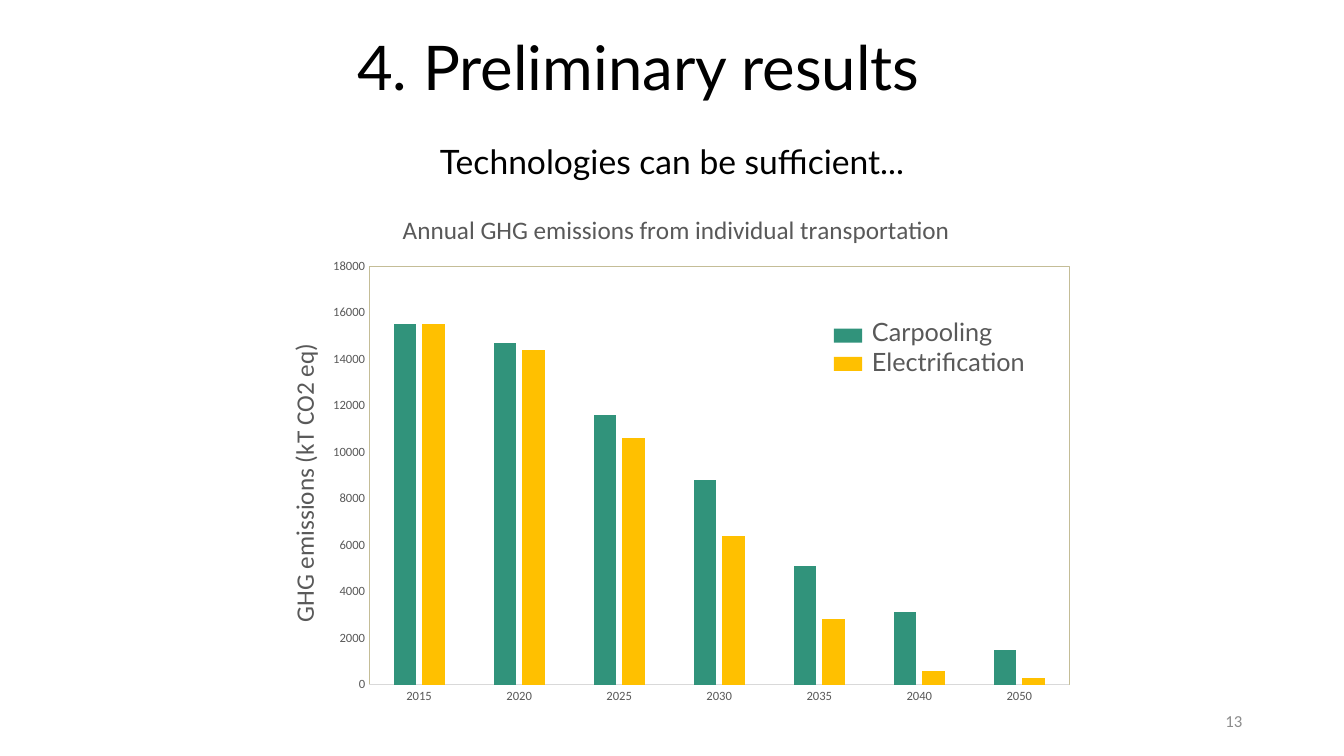
import pptx
import pptx.chart.data
import pptx.dml.color
import pptx.enum.chart
import pptx.enum.shapes
import pptx.enum.text
import pptx.oxml
import pptx.oxml.ns
import pptx.util

PX = 9144  # 100 px to the inch
COLORS = {"black": "000000", "text": "595959", "number": "8C8C8C", "axis": "D9D9D9",
          "frame": "C4BD97", "carpooling": "31937B", "electrification": "FFC000"}
ALIGN = pptx.enum.text.PP_ALIGN
ANCHOR = pptx.enum.text.MSO_ANCHOR
YEARS = ["2015", "2020", "2025", "2030", "2035", "2040", "2050"]
EMISSIONS = {
    "carpooling": [15500, 14700, 11600, 8800, 5100, 3100, 1500],
    "electrification": [15500, 14400, 10600, 6400, 2800, 600, 300],
}


class SlideBuilder:
    heading_font = "Lato"
    body_font = "Calibri"

    def __init__(self, slide):
        self.slide = slide

    def color(self, name):
        return pptx.dml.color.RGBColor.from_string(COLORS[name])

    def box(self, *lengths):
        return [length * PX for length in lengths]

    def style(self, font, size, color, name):
        font.size = pptx.util.Pt(size)
        font.bold = False
        font.name = name
        font.color.rgb = self.color(color)

    def text(self, box, lines, size, color, align=ALIGN.LEFT, anchor=ANCHOR.TOP,
             font=heading_font, spacing=1.0, parent=None):
        frame = (parent or self.slide).shapes.add_textbox(*self.box(*box)).text_frame
        frame.word_wrap = True
        frame.vertical_anchor = anchor
        for i, line in enumerate(lines):
            paragraph = frame.add_paragraph() if i else frame.paragraphs[0]
            paragraph.alignment = align
            paragraph.line_spacing = spacing
            run = paragraph.add_run()
            run.text = line
            self.style(run.font, size, color, font)

    def swatch(self, box, color, parent):
        rect = parent.shapes.add_shape(
            pptx.enum.shapes.MSO_SHAPE.RECTANGLE, *self.box(*box))
        rect.shadow.inherit = False
        rect.fill.solid()
        rect.fill.fore_color.rgb = self.color(color)
        rect.line.fill.background()

    def legend(self, left, top, names):
        group = self.slide.shapes.add_group_shape()
        for i, name in enumerate(names):
            self.swatch((left, top + 28 * i, 28, 14), name, group)
        self.text((left + 28, top - 17, 269, 131), [name.capitalize() for name in names],
                  18, "text", parent=group)

    def place(self, element, inner=False, **fractions):
        """Fix the position of a chart part, in fractions of the chart."""
        target = '<c:layoutTarget val="inner"/>' if inner else ""
        modes = "".join(f'<c:{key}Mode val="edge"/>' for key in "xy")
        values = "".join(f'<c:{key} val="{value}"/>' for key, value in fractions.items())
        layout = pptx.oxml.parse_xml(
            f'<c:layout {pptx.oxml.ns.nsdecls("c")}><c:manualLayout>'
            f'{target}{modes}{values}</c:manualLayout></c:layout>')
        for old in element.findall(pptx.oxml.ns.qn("c:layout")):
            element.remove(old)
        text = element.find(pptx.oxml.ns.qn("c:tx"))
        if text is None:
            element.insert(0, layout)
        else:
            text.addnext(layout)

    def chart_title(self, title, text, x, y):
        run = title.text_frame.paragraphs[0].add_run()
        run.text = text
        self.style(run.font, 18, "text", self.body_font)
        self.place(title._element, x=x, y=y)

    def frame_plot(self, plot_area):
        plot_area.append(pptx.oxml.parse_xml(
            f'<c:spPr {pptx.oxml.ns.nsdecls("c", "a")}><a:noFill/><a:ln w="9525"><a:solidFill>'
            f'<a:srgbClr val="{COLORS["frame"]}"/></a:solidFill></a:ln></c:spPr>'))

    def column_chart(self, box, title, axis_title, categories, series):
        data = pptx.chart.data.CategoryChartData()
        data.categories = categories
        for name, values in series.items():
            data.add_series(name.capitalize(), values)
        chart = self.slide.shapes.add_chart(
            pptx.enum.chart.XL_CHART_TYPE.COLUMN_CLUSTERED, *self.box(*box), data).chart
        self.style(chart.font, 10, "black", self.body_font)
        chart.has_legend = False
        chart.has_title = True
        self.chart_title(chart.chart_title, title, 0.17, 0.04)

        for axis in (chart.category_axis, chart.value_axis):
            self.style(axis.tick_labels.font, 9, "text", self.body_font)
            axis.major_tick_mark = pptx.enum.chart.XL_TICK_MARK.NONE
            axis.has_major_gridlines = False
        chart.category_axis.format.line.color.rgb = self.color("axis")
        chart.category_axis.format.line.width = pptx.util.Pt(0.75)
        emissions = chart.value_axis
        emissions.format.line.fill.background()
        emissions.minimum_scale, emissions.maximum_scale = 0, 18000
        emissions.major_unit = 2000
        emissions.has_title = True
        self.chart_title(emissions.axis_title, axis_title, 0.03, 0.29)

        plot = chart.plots[0]
        plot.gap_width, plot.overlap = 219, -27
        plot.vary_by_categories = False
        for columns, name in zip(plot.series, series):
            columns.format.fill.solid()
            columns.format.fill.fore_color.rgb = self.color(name)
        plot_area = chart._chartSpace.chart.plotArea
        self.place(plot_area, inner=True, x=0.135, y=0.151, w=0.844, h=0.794)
        self.frame_plot(plot_area)


def main():
    deck = pptx.Presentation()
    deck.slide_width, deck.slide_height = 1333 * PX, 750 * PX
    page = SlideBuilder(deck.slides.add_slide(deck.slide_layouts[6]))
    page.text((0, 22, 1267, 95), ["4. Preliminary results"], 44, "black",
              ALIGN.CENTER, ANCHOR.MIDDLE, spacing=0.9)
    page.text((407, 135, 519, 50), ["Technologies can be sufficient..."], 24, "black",
              ALIGN.CENTER)
    page.legend(827, 326, list(EMISSIONS))
    page.column_chart((255, 185, 823, 523),
                      "Annual GHG emissions from individual transportation",
                      "GHG emissions (kT CO2 eq)", YEARS, EMISSIONS)
    page.text((942, 695, 300, 40), ["13"], 12, "number", ALIGN.RIGHT, ANCHOR.MIDDLE,
              font=page.body_font)
    deck.save("out.pptx")


if __name__ == "__main__":
    main()
